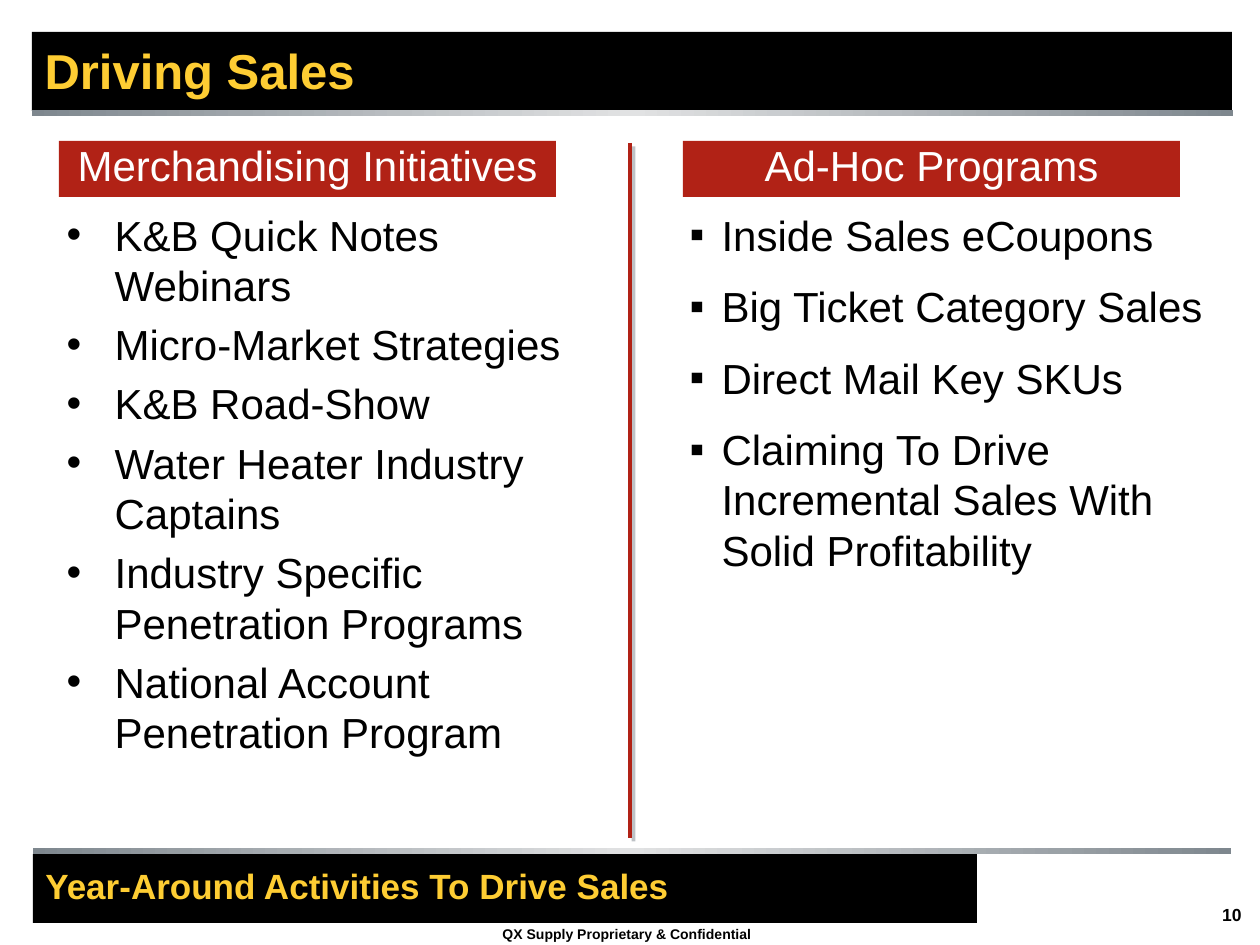
from copy import deepcopy
from typing import NamedTuple

from lxml.etree import SubElement
from pptx import Presentation
from pptx.dml.color import RGBColor
from pptx.enum.shapes import MSO_CONNECTOR as Connector, MSO_SHAPE as Shape
from pptx.enum.text import MSO_ANCHOR as Anchor, MSO_AUTO_SIZE as AutoSize, PP_ALIGN as Align
from pptx.oxml.ns import qn
from pptx.util import Emu, Inches, Pt

BLACK = RGBColor(0x00, 0x00, 0x00)
WHITE = RGBColor(0xFF, 0xFF, 0xFF)
GOLD = RGBColor(0xFE, 0xCD, 0x33)
RED = RGBColor(0xB1, 0x22, 0x16)
STEEL = RGBColor(0x7E, 0x87, 0x8E)
SILVER = RGBColor(0xE1, 0xE2, 0xE3)
FONT = "Arial"
EMU_PER_PX = 914400 / 126


class Box(NamedTuple):
    left: int
    top: int
    width: int
    height: int


class Column(NamedTuple):
    heading: str
    heading_box: Box
    list_box: Box
    bullet: str
    indent: int
    gap: int
    items: list[str]


COLUMNS = [
    Column("Merchandising Initiatives", Box(59, 141, 497, 56), Box(54, 203, 521, 572),
           "•", 48, 5,
           ["K&B Quick Notes Webinars", "Micro-Market Strategies", "K&B Road-Show",
            "Water Heater Industry Captains", "Industry Specific Penetration Programs",
            "National Account Penetration Program"]),
    Column("Ad-Hoc Programs", Box(683, 141, 497, 56), Box(677, 203, 543, 394),
           "▪", 32, 12,
           ["Inside Sales eCoupons", "Big Ticket Category Sales", "Direct Mail Key SKUs",
            "Claiming To Drive Incremental Sales With Solid Profitability"]),
]


def px(length: int) -> Emu:
    return Emu(round(length * EMU_PER_PX))


def place(shape, box: Box) -> None:
    shape.left, shape.top, shape.width, shape.height = map(px, box)


def add_bullet(paragraph, mark: str, indent: int) -> None:
    properties = paragraph._p.get_or_add_pPr()
    properties.set("marL", str(px(indent)))
    properties.set("indent", str(-px(indent)))
    SubElement(properties, qn("a:buFont"), typeface=FONT)
    SubElement(properties, qn("a:buChar"), char=mark)


def write(shape, *lines: str, size: int = 24, color: RGBColor = BLACK, bold: bool = False,
          align=Align.LEFT, anchor=Anchor.TOP, spacing: float = 1.0, wrap: bool = True,
          bullet: str = "", indent: int = 0, gap: int = 0) -> None:
    frame = shape.text_frame
    frame.auto_size = AutoSize.NONE
    frame.word_wrap = wrap
    frame.vertical_anchor = anchor
    for index, line in enumerate(lines):
        paragraph = frame.add_paragraph() if index else frame.paragraphs[0]
        if bullet:
            add_bullet(paragraph, bullet, indent)
        paragraph.alignment = align
        paragraph.line_spacing = spacing
        paragraph.space_before = Pt(gap if index else 0)
        run = paragraph.add_run()
        run.text = line
        font = run.font
        font.name, font.size, font.bold = FONT, Pt(size), bold
        font.color.rgb = color


def add_bar(slide, box: Box, color: RGBColor):
    bar = slide.shapes.add_shape(Shape.RECTANGLE, *map(px, box))
    bar.shadow.inherit = False
    bar.fill.solid()
    bar.fill.fore_color.rgb = color
    bar.line.fill.background()
    return bar


def add_metal_strip(slide, box: Box) -> None:
    """Draw a thin bar that shades from steel to silver and back."""
    strip = add_bar(slide, box, STEEL)
    strip.fill.gradient()
    strip.fill.gradient_angle = 0
    stop_list = strip._element.spPr.find(".//" + qn("a:gsLst"))
    stop_list.insert(1, deepcopy(stop_list[0]))
    for stop, position, color in zip(strip.fill.gradient_stops, (0, 0.5, 1),
                                     (STEEL, SILVER, STEEL)):
        stop.position = position
        stop.color.rgb = color


def add_divider(slide, x: int, top: int, bottom: int) -> None:
    divider = slide.shapes.add_connector(Connector.STRAIGHT, px(x), px(top), px(x), px(bottom))
    divider.line.color.rgb = RED
    divider.line.width = Pt(2.25)
    effects = SubElement(divider._element.spPr, qn("a:effectLst"))
    shadow = SubElement(effects, qn("a:outerShdw"), blurRad="0", dist=str(Pt(2.8)),
                        dir="2700000", algn="ctr", rotWithShape="0")
    tint = SubElement(shadow, qn("a:srgbClr"), val=str(STEEL))
    SubElement(tint, qn("a:alpha"), val="50000")


def add_label(slide, box: Box, text: str, **text_format) -> None:
    write(slide.shapes.add_textbox(*map(px, box)), text, bold=True, **text_format)


def bring_forward(slide, shape) -> None:
    slide.shapes._spTree.append(shape._element)


def main() -> None:
    deck = Presentation()
    deck.slide_width, deck.slide_height = Inches(10), Inches(7.5)
    slide = deck.slides.add_slide(deck.slide_layouts[3])
    title, *lists = slide.placeholders

    add_bar(slide, Box(32, 32, 1200, 79), BLACK)
    add_metal_strip(slide, Box(33, 848, 1198, 6))
    add_metal_strip(slide, Box(32, 110, 1201, 6))
    add_label(slide, Box(960, 898, 294, 44), "10", size=10, align=Align.RIGHT)
    add_label(slide, Box(490, 919, 278, 29), "QX Supply Proprietary & Confidential",
              size=8, anchor=Anchor.MIDDLE, wrap=False)

    place(title, Box(32, 30, 893, 79))
    write(title, "Driving Sales", size=28, color=GOLD, bold=True, anchor=Anchor.MIDDLE)
    bring_forward(slide, title)

    tagline = add_bar(slide, Box(33, 854, 944, 69), BLACK)
    write(tagline, "Year-Around Activities To Drive Sales", size=20, color=GOLD, bold=True,
          anchor=Anchor.MIDDLE, spacing=0.85)

    for column, body in zip(COLUMNS, lists):
        heading = add_bar(slide, column.heading_box, RED)
        write(heading, column.heading, color=WHITE, align=Align.CENTER, spacing=0.85)
        place(body, column.list_box)
        write(body, *column.items, bullet=column.bullet, indent=column.indent, gap=column.gap)
        bring_forward(slide, body)

    add_divider(slide, 630, 143, 838)
    deck.save("out.pptx")


if __name__ == "__main__":
    main()
